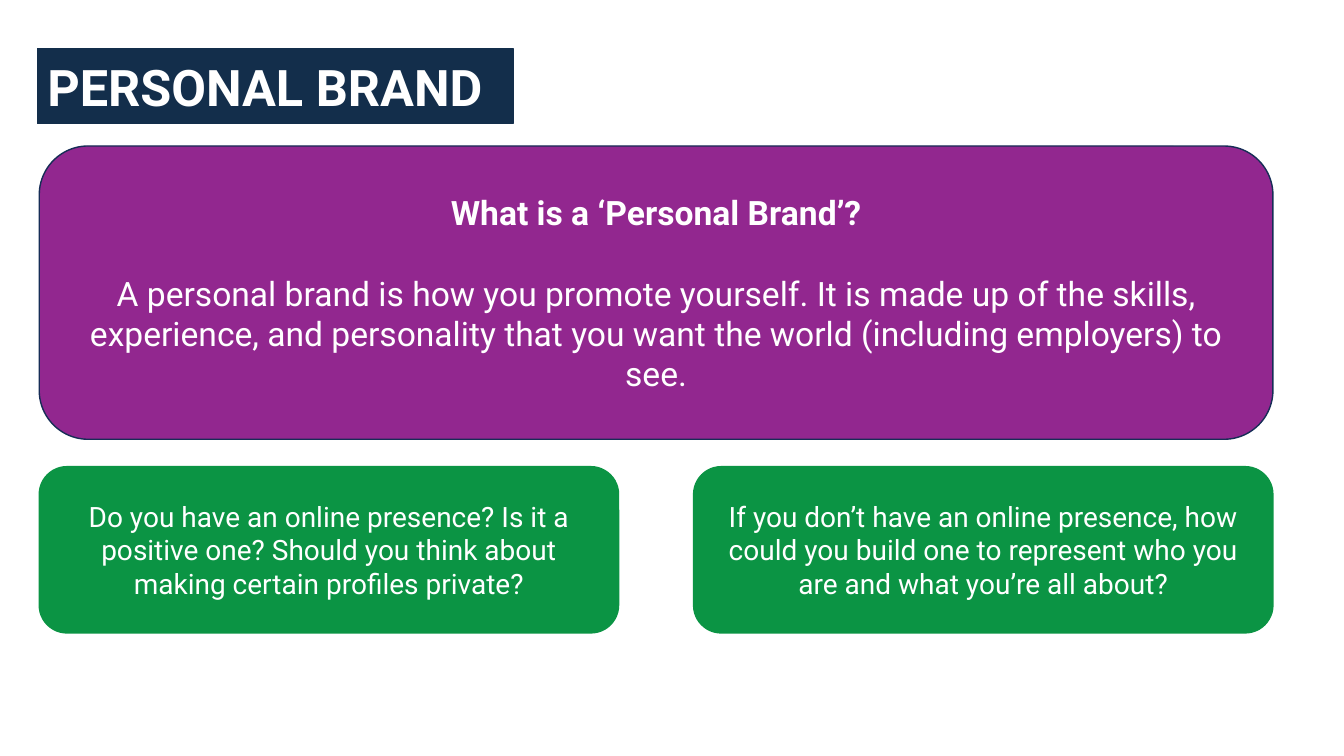
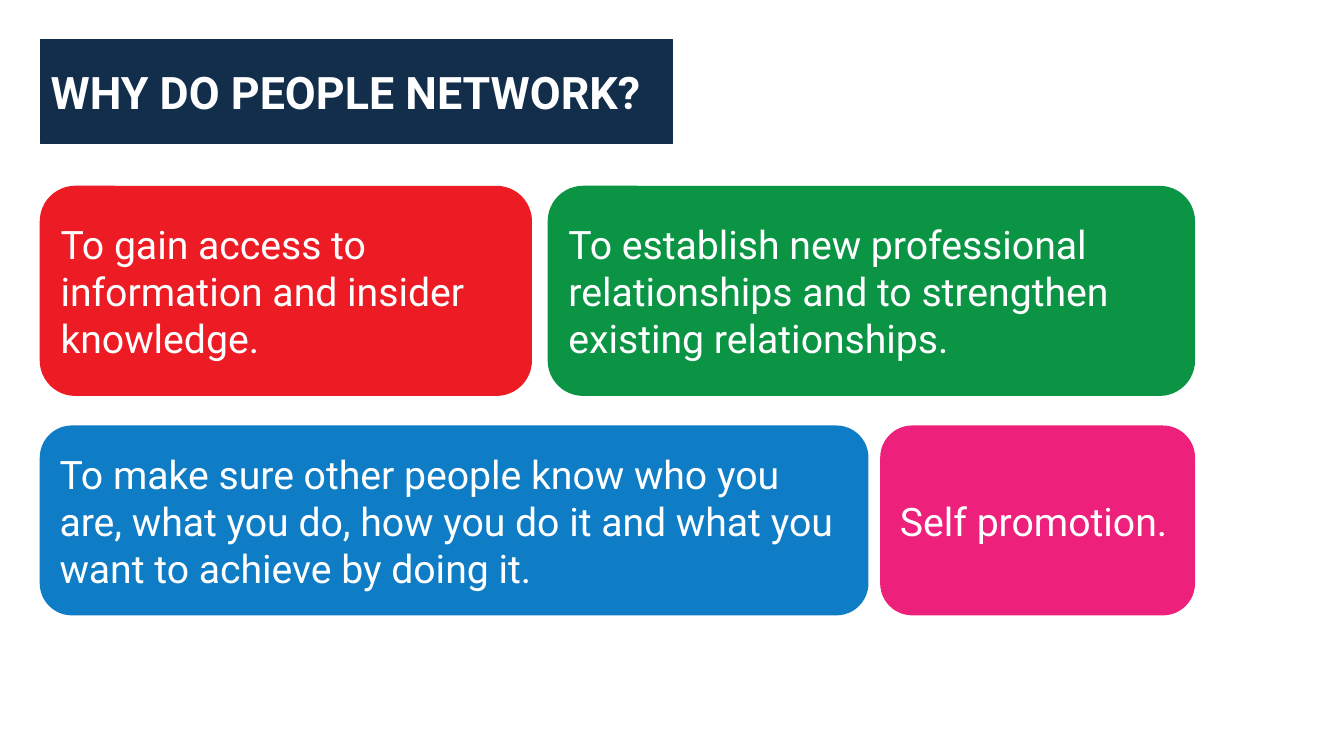
from dataclasses import dataclass

from pptx import Presentation
from pptx.dml.color import RGBColor
from pptx.enum.shapes import MSO_SHAPE
from pptx.enum.text import MSO_ANCHOR, MSO_AUTO_SIZE, PP_ALIGN
from pptx.util import Cm, Pt

WHITE = RGBColor(0xFF, 0xFF, 0xFF)
NAVY = RGBColor(0x13, 0x2E, 0x4B)
INDIGO = RGBColor(0x16, 0x2D, 0x56)
PURPLE = RGBColor(0x92, 0x27, 0x8F)
GREEN = RGBColor(0x0B, 0x94, 0x44)
RED = RGBColor(0xED, 0x1C, 0x24)
BLUE = RGBColor(0x0F, 0x7C, 0xC6)
PINK = RGBColor(0xED, 0x21, 0x7C)

FONT = "Roboto"
TITLE_ONLY = 5


@dataclass
class Banner:
    text: str
    left: float
    top: float
    width: float
    height: float
    size: int


@dataclass
class Card:
    text: str
    width: float
    fill: RGBColor
    line: RGBColor | None = None
    heading: str = ""


@dataclass
class Row:
    top: float
    height: float
    gap: float
    size: int
    cards: list[Card]


@dataclass
class Page:
    banner: Banner
    left: float
    align: PP_ALIGN
    rows: list[Row]


PAGES = [
    Page(
        Banner("PERSONAL BRAND", 0.94, 1.22, 11.99, 1.9, 36),
        0.99,
        PP_ALIGN.CENTER,
        [
            Row(3.68, 7.39, 0, 24, [
                Card(
                    "A personal brand is how you promote yourself. It is made up "
                    "of the skills, experience, and personality that you want "
                    "the world (including employers) to see.",
                    31.09, PURPLE, INDIGO, "What is a ‘Personal Brand’?",
                ),
            ]),
            Row(11.76, 4.19, 1.89, 20, [
                Card(
                    "Do you have an online presence? Is it a positive one? "
                    "Should you think about making certain profiles private?",
                    14.6, GREEN,
                ),
                Card(
                    "If you don’t have an online presence, how could you build "
                    "one to represent who you are and what you’re all about?",
                    14.6, GREEN,
                ),
            ]),
        ],
    ),
    Page(
        Banner("WHY DO PEOPLE NETWORK?", 1.02, 0.99, 15.93, 2.62, 32),
        1.02,
        PP_ALIGN.LEFT,
        [
            Row(4.7, 5.26, 0.43, 28, [
                Card("To gain access to information and insider knowledge.",
                     12.37, RED),
                Card("To establish new professional relationships and to "
                     "strengthen existing relationships.", 16.28, GREEN),
            ]),
            Row(10.74, 4.75, 0.33, 28, [
                Card("To make sure other people know who you are, what you do, "
                     "how you do it and what you want to achieve by doing it.",
                     20.85, BLUE),
                Card("Self promotion.", 7.9, PINK),
            ]),
        ],
    ),
]


def paint(shape, fill: RGBColor, line: RGBColor) -> None:
    shape.fill.solid()
    shape.fill.fore_color.rgb = fill
    shape.line.color.rgb = line
    shape.line.width = Pt(1)


def style(para, size: int, align: PP_ALIGN, bold: bool = False) -> None:
    para.alignment = align
    font = para.font
    font.name = FONT
    font.size = Pt(size)
    font.bold = bold
    font.color.rgb = WHITE


def set_frame(frame) -> None:
    frame.word_wrap = True
    frame.auto_size = MSO_AUTO_SIZE.NONE
    frame.vertical_anchor = MSO_ANCHOR.MIDDLE


def draw_banner(slide, banner: Banner) -> None:
    title = slide.shapes.title
    title.left, title.top = Cm(banner.left), Cm(banner.top)
    title.width, title.height = Cm(banner.width), Cm(banner.height)
    paint(title, NAVY, NAVY)
    frame = title.text_frame
    set_frame(frame)
    frame.text = banner.text
    style(frame.paragraphs[0], banner.size, PP_ALIGN.LEFT, bold=True)


def draw_row(slide, row: Row, left: float, align: PP_ALIGN) -> None:
    for card in row.cards:
        shape = slide.shapes.add_shape(
            MSO_SHAPE.ROUNDED_RECTANGLE,
            Cm(left), Cm(row.top), Cm(card.width), Cm(row.height),
        )
        shape.shadow.inherit = False
        paint(shape, card.fill, card.line or card.fill)
        frame = shape.text_frame
        set_frame(frame)
        para = frame.paragraphs[0]
        if card.heading:
            para.text = card.heading
            style(para, row.size, align, bold=True)
            para = frame.add_paragraph()
            para.space_before = Pt(29)
        para.text = card.text
        style(para, row.size, align)
        left += card.width + row.gap


def main() -> None:
    deck = Presentation()
    deck.slide_width, deck.slide_height = Cm(33.87), Cm(19.05)
    for page in PAGES:
        slide = deck.slides.add_slide(deck.slide_layouts[TITLE_ONLY])
        draw_banner(slide, page.banner)
        for row in page.rows:
            draw_row(slide, row, page.left, page.align)
    deck.save("out.pptx")


if __name__ == "__main__":
    main()
